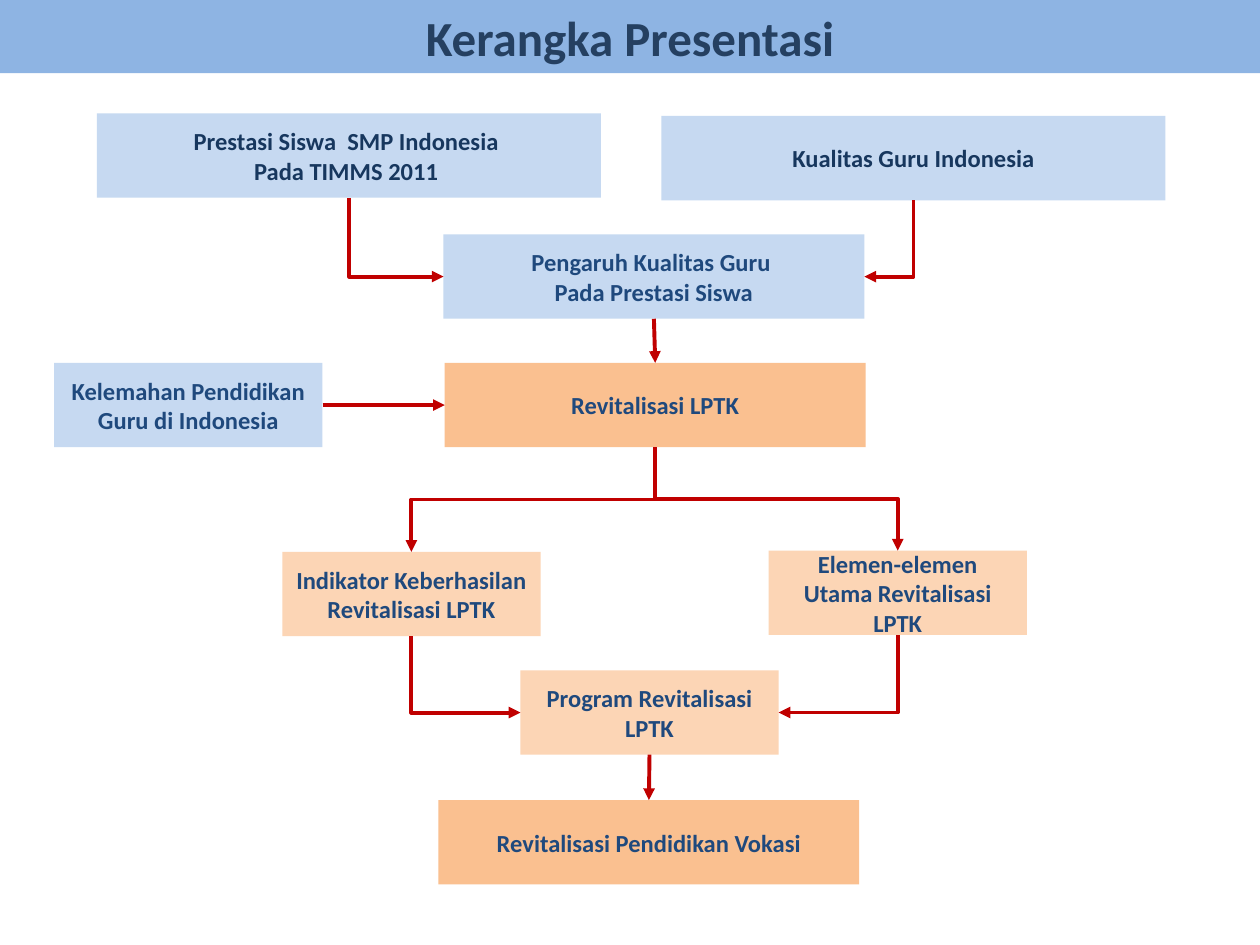
from dataclasses import dataclass

from lxml import etree
from pptx import Presentation
from pptx.dml.color import RGBColor
from pptx.enum.shapes import MSO_CONNECTOR, MSO_SHAPE
from pptx.enum.text import MSO_ANCHOR, MSO_AUTO_SIZE, PP_ALIGN
from pptx.oxml.ns import qn
from pptx.util import Inches, Pt

RECTANGLE = MSO_SHAPE.RECTANGLE
STRAIGHT, ELBOW = MSO_CONNECTOR.STRAIGHT, MSO_CONNECTOR.ELBOW
CENTER, MIDDLE = PP_ALIGN.CENTER, MSO_ANCHOR.MIDDLE
TITLE_ONLY = 5


@dataclass(frozen=True)
class Theme:
    font: str = "Calibri"
    title_size: int = 28
    box_size: int = 14
    line_width: float = 2.25
    box_height: float = 0.67
    banner: str = "8EB4E3"
    title: str = "254061"
    navy: str = "17375E"
    text: str = "1F497D"
    blue: str = "C6D9F1"
    peach: str = "FCD5B5"
    orange: str = "FAC090"
    arrow: str = "C00000"


THEME = Theme()

# Name: left, top, width, fill, text colour, lines
BOXES = {
    "students": (0.77, 0.9, 4, THEME.blue, THEME.navy,
                 ["Prestasi Siswa  SMP Indonesia ", "Pada TIMMS 2011 "]),
    "teachers": (5.25, 0.92, 4, THEME.blue, THEME.navy,
                 ["Kualitas Guru Indonesia"]),
    "influence": (3.52, 1.86, 3.34, THEME.blue, THEME.text,
                  ["Pengaruh Kualitas Guru ", "Pada Prestasi Siswa"]),
    "weakness": (0.43, 2.88, 2.13, THEME.blue, THEME.text,
                 ["Kelemahan Pendidikan Guru di Indonesia"]),
    "revitalisation": (3.53, 2.88, 3.34, THEME.orange, THEME.text,
                       ["Revitalisasi LPTK"]),
    "indicators": (2.24, 4.38, 2.05, THEME.peach, THEME.text,
                   ["Indikator Keberhasilan Revitalisasi LPTK"]),
    "elements": (6.1, 4.37, 2.05, THEME.peach, THEME.text,
                 ["Elemen-elemen Utama Revitalisasi LPTK"]),
    "program": (4.13, 5.32, 2.05, THEME.peach, THEME.text,
                ["Program Revitalisasi LPTK"]),
    "vocational": (3.48, 6.35, 3.34, THEME.orange, THEME.text,
                   ["Revitalisasi Pendidikan Vokasi"]),
}

# From box, its side, to box, its side
ARROWS = [
    ("students", "bottom", "influence", "left"),
    ("teachers", "bottom", "influence", "right"),
    ("influence", "bottom", "revitalisation", "top"),
    ("weakness", "right", "revitalisation", "left"),
    ("revitalisation", "bottom", "indicators", "top"),
    ("revitalisation", "bottom", "elements", "top"),
    ("indicators", "bottom", "program", "left"),
    ("elements", "bottom", "program", "right"),
    ("program", "bottom", "vocational", "top"),
]


def fill_shape(shape, color):
    shape.fill.solid()
    shape.fill.fore_color.rgb = RGBColor.from_string(color)


def write_lines(shape, lines, size, color):
    frame = shape.text_frame
    frame.word_wrap = True
    frame.auto_size = MSO_AUTO_SIZE.NONE
    frame.vertical_anchor = MIDDLE
    for index, line in enumerate(lines):
        para = frame.add_paragraph() if index else frame.paragraphs[0]
        para.alignment = CENTER
        span = para.add_run()
        span.text = line
        span.font.name = THEME.font
        span.font.size = Pt(size)
        span.font.bold = True
        span.font.color.rgb = RGBColor.from_string(color)


def add_title(page, text):
    title = page.shapes.title
    title.left, title.top = Inches(0), Inches(0)
    title.width, title.height = Inches(10), Inches(0.58)
    fill_shape(title, THEME.banner)
    write_lines(title, [text], THEME.title_size, THEME.title)


def add_box(page, left, top, width, fill, color, lines):
    box = page.shapes.add_shape(RECTANGLE, Inches(left), Inches(top),
                                Inches(width), Inches(THEME.box_height))
    box.shadow.inherit = False
    box.line.fill.background()
    fill_shape(box, fill)
    write_lines(box, lines, THEME.box_size, color)
    return box


def side_point(box, side):
    across, down = {"left": (0, 0.5), "right": (1, 0.5),
                    "top": (0.5, 0), "bottom": (0.5, 1)}[side]
    return (int(box.left + box.width * across),
            int(box.top + box.height * down))


def style_arrow(arrow):
    arrow.line.color.rgb = RGBColor.from_string(THEME.arrow)
    arrow.line.width = Pt(THEME.line_width)
    etree.SubElement(arrow.line._get_or_add_ln(), qn("a:tailEnd"),
                     type="triangle")
    etree.SubElement(arrow._element.spPr, qn("a:effectLst"))


def add_straight_arrow(page, start, end):
    style_arrow(page.shapes.add_connector(STRAIGHT, *start, *end))


def add_elbow_arrow(page, start, end, preset):
    """Leave downwards: the connector is a quarter turn about its centre."""
    (x1, y1), (x2, y2) = start, end
    center_x, center_y = (x1 + x2) // 2, (y1 + y2) // 2
    half_width, half_height = (y2 - y1) // 2, abs(x2 - x1) // 2
    rightwards = x2 > x1
    if rightwards:
        half_width = -half_width
    arrow = page.shapes.add_connector(
        ELBOW, center_x - half_width, center_y - half_height,
        center_x + half_width, center_y + half_height)
    properties = arrow._element.spPr
    degrees = 270 if rightwards else 90
    properties.find(qn("a:xfrm")).set("rot", str(degrees * 60000))
    properties.find(qn("a:prstGeom")).set("prst", preset)
    style_arrow(arrow)


def add_arrow(page, boxes, source, source_side, target, target_side):
    start = side_point(boxes[source], source_side)
    end = side_point(boxes[target], target_side)
    # Small offsets between stacked boxes still give a straight arrow
    aligned = abs(end[0] - start[0]) < Inches(0.1)
    if source_side == "right" or aligned:
        add_straight_arrow(page, start, end)
    else:
        bends = "bentConnector3" if target_side == "top" else "bentConnector2"
        add_elbow_arrow(page, start, end, bends)


def main():
    deck = Presentation()
    deck.slide_width, deck.slide_height = Inches(10), Inches(7.5)
    page = deck.slides.add_slide(deck.slide_layouts[TITLE_ONLY])

    # Title banner
    add_title(page, "Kerangka Presentasi")

    # Flow chart
    boxes = {name: add_box(page, *values) for name, values in BOXES.items()}
    for arrow in ARROWS:
        add_arrow(page, boxes, *arrow)

    deck.save("out.pptx")


if __name__ == "__main__":
    main()
